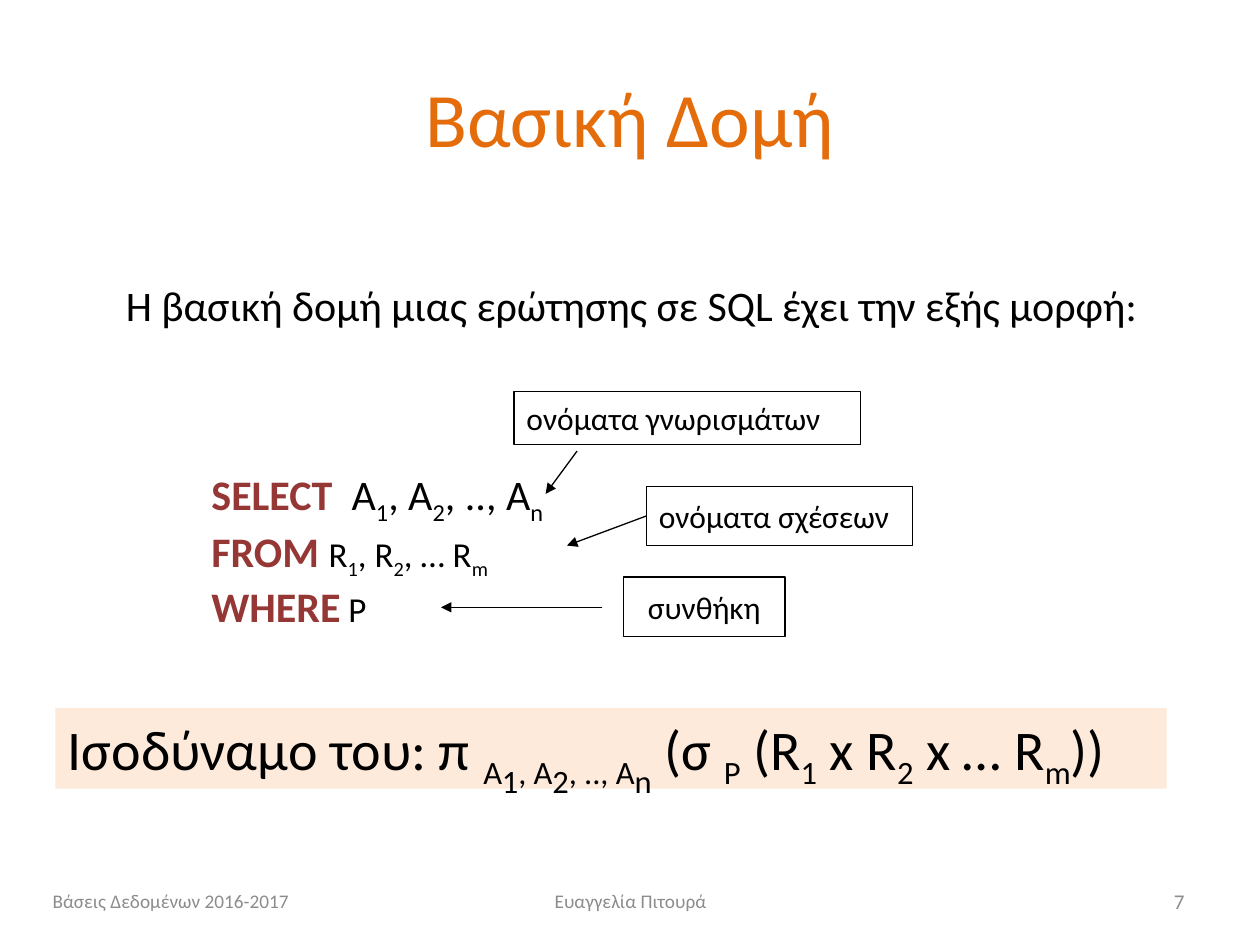
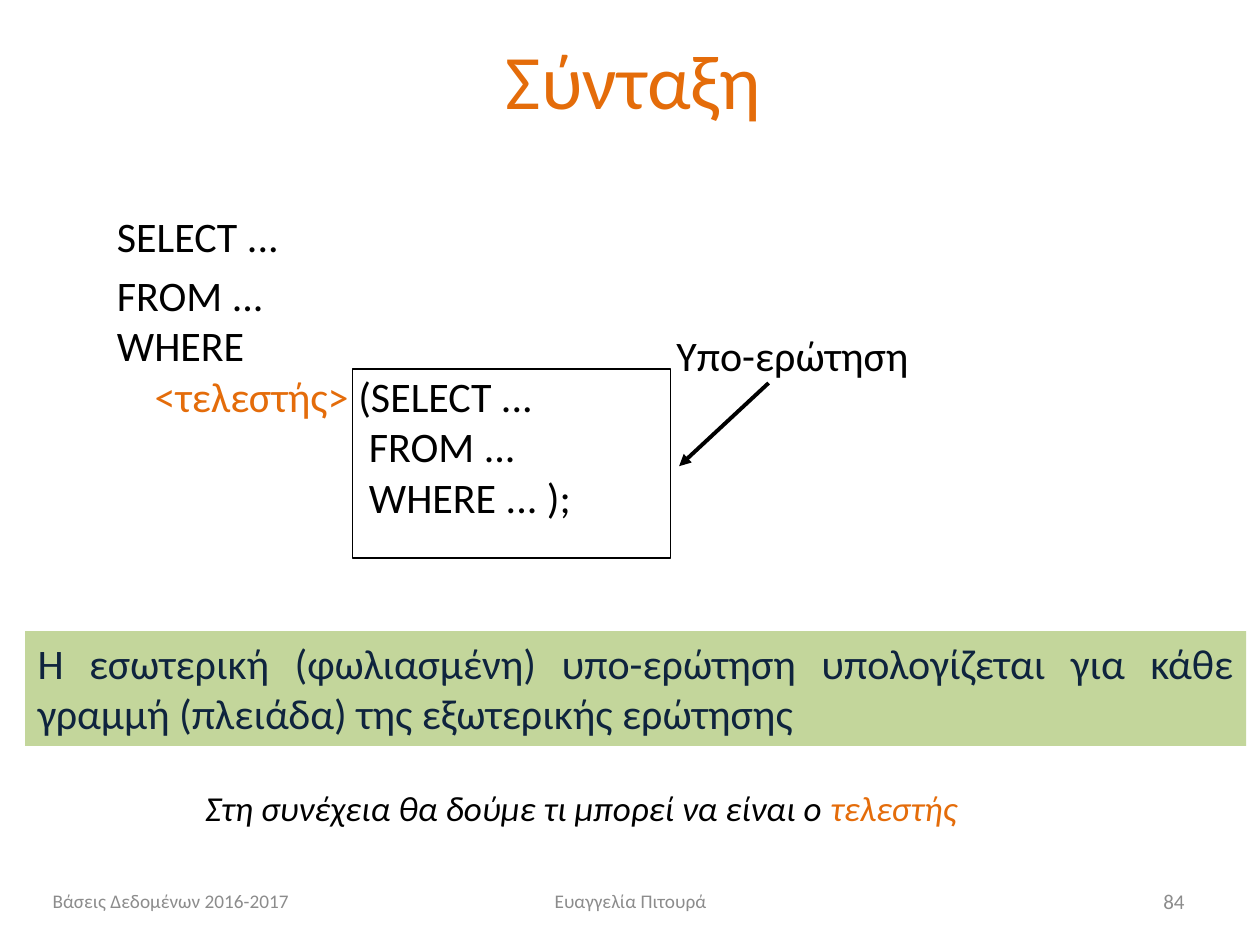
from lxml import etree
from pptx import Presentation
from pptx.dml.color import RGBColor
from pptx.enum import shapes, text
from pptx.oxml.ns import qn
from pptx.util import Inches, Pt

FONT = "Calibri"
BLACK, ORANGE, BROWN, GREY, NAVY = "000000", "E46C0A", "953735", "8C8C8C", "0F243E"
PEACH, GREEN = "FDEADA", "C3D69B"
LEFT, CENTER = text.PP_ALIGN.LEFT, text.PP_ALIGN.CENTER
RIGHT, JUSTIFY = text.PP_ALIGN.RIGHT, text.PP_ALIGN.JUSTIFY
TOP, MIDDLE = text.MSO_ANCHOR.TOP, text.MSO_ANCHOR.MIDDLE


def rgb(value):
    """Turn a hex string into a colour."""
    return RGBColor.from_string(value)


def sub(line, size, base=0, low=-25):
    """Make runs from a line whose lowered parts stand between underscores."""
    return [(part, {"size": size, "base": low if i % 2 else base})
            for i, part in enumerate(line.split("_")) if part]


class Deck:
    """Hold the presentation, its style and the current slide."""

    def __init__(self):
        """Start a 4:3 presentation."""
        self.prs = Presentation()
        self.prs.slide_width, self.prs.slide_height = Inches(10), Inches(7.5)

    def slide(self, title, number, left, top):
        """Add a slide with its title and footers."""
        self.s = self.prs.slides.add_slide(self.prs.slide_layouts[5])
        sp = self.s.shapes.title
        sp.left, sp.top, sp.width, sp.height = map(Inches, (left, top, 9, 1.25))
        self.set_text(sp, [[title]], 44, ORANGE, CENTER, MIDDLE)
        footers = (("Βάσεις Δεδομένων 2016-2017", 0.32, 2.33, 11, LEFT),
                   ("Ευαγγελία Πιτουρά", 3.42, 3.17, 11, CENTER),
                   (number, 7.17, 2.33, 12, RIGHT))
        for words, x, width, size, align in footers:
            self.label([[words]], (x, 6.95, width, 0.4), size, GREY, align, MIDDLE)

    def set_text(self, sp, lines, size, color=BLACK, align=LEFT, anchor=TOP):
        """Fill a shape with lines of runs, each a string or a (text, format) pair."""
        tf = sp.text_frame
        tf.word_wrap, tf.vertical_anchor = True, anchor
        for i, runs in enumerate(lines):
            p = tf.paragraphs[0] if i == 0 else tf.add_paragraph()
            p.alignment = align
            for run in runs:
                words, fmt = (run, {}) if isinstance(run, str) else run
                fmt = {"name": FONT, "size": size, "color": color, **fmt}
                r = p.add_run()
                r.text = words
                r.font.color.rgb = rgb(fmt.pop("color"))
                base = fmt.pop("base", 0)
                if base:
                    r._r.get_or_add_rPr().set("baseline", str(base * 1000))
                fmt["size"] = Pt(fmt["size"])
                for key, value in fmt.items():
                    setattr(r.font, key, value)
        return tf

    def label(self, lines, at, size, color=BLACK, align=LEFT, anchor=TOP):
        """Add a text box."""
        sp = self.s.shapes.add_textbox(*map(Inches, at))
        return self.set_text(sp, lines, size, color, align, anchor)

    def rect(self, at, fill=None):
        """Add a filled band, or an outlined box when no fill is given."""
        sp = self.s.shapes.add_shape(shapes.MSO_SHAPE.RECTANGLE, *map(Inches, at))
        sp.shadow.inherit = False
        if fill:
            sp.fill.solid()
            sp.fill.fore_color.rgb = rgb(fill)
            sp.line.fill.background()
        else:
            sp.fill.background()
            sp.line.color.rgb = rgb(BLACK)
            sp.line.width = Pt(0.75)
        return sp

    def arrow(self, start, end, width=0.75, source=None):
        """Add an arrow, joined to the left side of a source box if given."""
        sp = self.s.shapes.add_connector(
            shapes.MSO_CONNECTOR.STRAIGHT, *map(Inches, start + end))
        if source is not None:
            sp.begin_connect(source, 1)
        sp.line.color.rgb = rgb(BLACK)
        sp.line.width = Pt(width)
        sp_pr = sp._element.spPr
        etree.SubElement(sp_pr.find(qn("a:ln")), qn("a:tailEnd"), type="triangle")
        etree.SubElement(sp_pr, qn("a:effectLst"))


def basic_structure(deck):
    """Build the slide on the basic form of a query."""
    deck.slide("Βασική Δομή", "7", 0.5, 0.3)
    deck.label([["Η βασική δομή μιας ερώτησης σε SQL έχει την εξής μορφή:"]],
               (0.9, 2.17, 8.42, 0.5), 24)
    keyword = {"color": BROWN, "bold": True}
    deck.label([[("SELECT ", keyword), *sub(" Α_1_, Α_2_, .., Α_n_", 24)],
                [("FROM ", keyword), *sub("R_1_, R_2_, … R_m_", 20)],
                [("WHERE", keyword), *sub(" P", 20)]],
               (1.58, 3.67, 5.67, 1.31), 24)

    notes = (("ονόματα γνωρισμάτων", (4.08, 3.11, 2.75, 0.42), LEFT),
             ("ονόματα σχέσεων", (5.13, 3.86, 2.11, 0.47), LEFT),
             ("συνθήκη", (4.95, 4.58, 1.28, 0.47), CENTER))
    boxes = []
    for words, at, align in notes:
        boxes.append(deck.rect(at))
        deck.set_text(boxes[-1], [[words]], 18, BLACK, align, MIDDLE)
    deck.arrow((4.58, 3.58), (4.33, 3.92))
    deck.arrow((5.13, 4.1), (4.5, 4.33), source=boxes[1])
    deck.arrow((4.78, 4.82), (3.5, 4.82))

    algebra = (sub("Ισοδύναμο του: π ", 32)
               + sub("A_1_, A_2_, .., A_n_", 32, -25, -42)
               + sub(" (σ _P_ (R_1_ x R_2_ x … R_m_))", 32))
    deck.set_text(deck.rect((0.44, 5.62, 8.82, 0.64), PEACH), [algebra], 32)


def syntax(deck):
    """Build the slide on nested queries."""
    deck.slide("Σύνταξη", "84", 0.53, 0)
    operator = {"color": ORANGE}
    tf = deck.label([["SELECT ..."], ["FROM ..."], ["WHERE"],
                     [("<τελεστής> ", operator), "(SELECT ..."],
                     ["FROM ..."], ["WHERE ... );"]],
                    (0.83, 1.62, 5, 2.59), 24)
    tf.paragraphs[0].space_before = tf.paragraphs[0].space_after = Pt(5)
    for p, indent in zip(tf.paragraphs[3:], (0.3, 2, 2)):
        p._p.get_or_add_pPr().set("marL", str(Inches(indent)))
    deck.rect((2.8, 2.93, 2.52, 1.5))
    deck.label([["Υπο-ερώτηση"]], (5.27, 2.57, 3.09, 0.5), 24)
    deck.arrow((6.1, 3.04), (5.39, 3.7), 2.25)
    deck.set_text(deck.rect((0.2, 5.01, 9.69, 0.91), GREEN),
                  [["Η εσωτερική (φωλιασμένη) υπο-ερώτηση υπολογίζεται για κάθε "
                    "γραμμή (πλειάδα) της εξωτερικής ερώτησης"]], 24, NAVY, JUSTIFY)
    deck.label([[("Στη συνέχεια θα δούμε τι μπορεί να είναι ο ", {"italic": True}),
                 ("τελεστής", {"italic": True, **operator})]],
               (1.53, 6.19, 7.4, 0.43), 20)


def main():
    """Build and save the slides."""
    deck = Deck()
    basic_structure(deck)
    syntax(deck)
    deck.prs.save("out.pptx")


if __name__ == "__main__":
    main()
